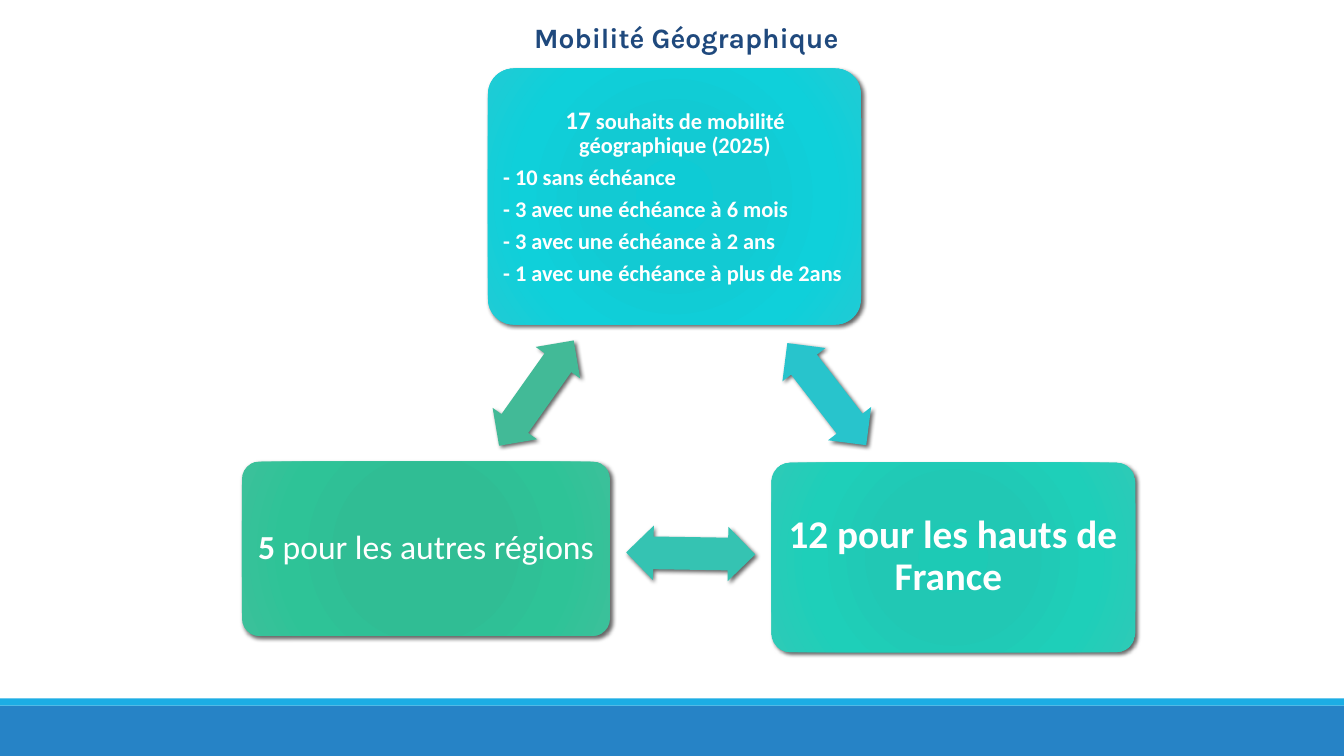
import pptx
import pptx.dml.color
import pptx.enum.shapes
import pptx.enum.text
import pptx.oxml
import pptx.oxml.ns
import pptx.util
from pptx.util import Inches

SHAPES = pptx.enum.shapes.MSO_SHAPE
ALIGN = pptx.enum.text.PP_ALIGN
COLORS = {
    "white": "FFFFFF", "title": "1F497D", "band": "2683C6", "stripe": "1CADE4",
    "arrow_right": "28C4CC", "arrow_bottom": "35C3B2", "arrow_left": "42BA97",
}
# Gradient colours of each card at the shared stops
STOPS = (0, 34, 70, 100)
GRADIENTS = {
    "wishes": ("0ECBD5", "12CAD3", "0FD0DA", "20CBD4"),
    "north": ("1DCAB5", "21C8B4", "1ECFB9", "2ECAB7"),
    "others": ("2DBE94", "30BD94", "2EC397", "3CC09A"),
}


class SlideBuilder:
    def __init__(self, deck):
        self.page = deck.slides.add_slide(deck.slide_layouts[6])
        self.font = "Calibri"

    def color(self, name):
        return pptx.dml.color.RGBColor.from_string(COLORS[name])

    def shape(self, kind, bounds, fill=None):
        box = self.page.shapes.add_shape(kind, *map(Inches, bounds))
        box.shadow.inherit = False
        box.line.fill.background()
        if fill:
            box.fill.solid()
            box.fill.fore_color.rgb = self.color(fill)
        return box

    def add_shadow(self, box):
        effects = box._element.spPr.find(pptx.oxml.ns.qn("a:effectLst"))
        effects.append(pptx.oxml.parse_xml(
            f'<a:outerShdw {pptx.oxml.ns.nsdecls("a")} blurRad="38100" dist="25400" '
            'dir="2700000" rotWithShape="0"><a:srgbClr val="000000">'
            '<a:alpha val="60000"/></a:srgbClr></a:outerShdw>'))

    def card(self, bounds, gradient):
        box = self.shape(SHAPES.ROUNDED_RECTANGLE, bounds)
        box.adjustments[0] = 0.1
        stops = "".join(
            f'<a:gs pos="{stop * 1000}"><a:srgbClr val="{shade}"/></a:gs>'
            for stop, shade in zip(STOPS, GRADIENTS[gradient]))
        fill = pptx.oxml.parse_xml(
            f'<a:gradFill {pptx.oxml.ns.nsdecls("a")} rotWithShape="1">'
            f'<a:gsLst>{stops}</a:gsLst><a:path path="circle">'
            '<a:fillToRect l="100000" t="100000" r="100000" b="100000"/>'
            '</a:path></a:gradFill>')
        box._element.spPr.find(pptx.oxml.ns.qn("a:prstGeom")).addnext(fill)
        self.add_shadow(box)

    def arrow(self, left, top, angle, fill):
        box = self.shape(SHAPES.LEFT_RIGHT_ARROW, (left, top, 1.28, 0.54), fill)
        box.adjustments[0], box.adjustments[1] = 0.6, 0.5
        box.rotation = angle
        self.add_shadow(box)

    def text_box(self, bounds, inset=None):
        frame = self.page.shapes.add_textbox(*map(Inches, bounds)).text_frame
        frame.word_wrap = True
        if inset is not None:
            frame.margin_left = frame.margin_right = Inches(inset)
            frame.margin_top = frame.margin_bottom = Inches(inset)
            frame.vertical_anchor = pptx.enum.text.MSO_ANCHOR.MIDDLE
        return frame

    def style(self, span, size, bold=True, color="white", font=None):
        span.font.name = font or self.font
        span.font.size = pptx.util.Pt(size)
        span.font.bold = bold
        span.font.color.rgb = self.color(color)

    def card_text(self, bounds, inset, size, paragraphs):
        """Each paragraph is (alignment, [(text, size, bold), ...])."""
        frame = self.text_box(bounds, inset)
        for index, (align, pieces) in enumerate(paragraphs):
            para = frame.add_paragraph() if index else frame.paragraphs[0]
            para.alignment = align
            para.line_spacing = 0.9
            para.space_after = pptx.util.Pt(0.35 * size)
            for text, points, bold in pieces:
                span = para.add_run()
                span.text = text
                self.style(span, points, bold)

    def title(self, text, bounds):
        frame = self.text_box(bounds)
        frame.auto_size = pptx.enum.text.MSO_AUTO_SIZE.SHAPE_TO_FIT_TEXT
        frame.text = text
        self.style(frame.paragraphs[0].runs[0], 20, color="title", font="Karla")


def main():
    deck = pptx.Presentation()
    deck.slide_width, deck.slide_height = Inches(13.33), Inches(7.5)
    slide = SlideBuilder(deck)

    # Footer bands
    slide.shape(SHAPES.RECTANGLE, (0, 7, 13.33, 0.5), "band")
    slide.shape(SHAPES.RECTANGLE, (0, 6.93, 13.33, 0.07), "stripe")

    # Mobility wishes
    deadlines = ("10 sans échéance", "3 avec une échéance à 6 mois",
                 "3 avec une échéance à 2 ans", "1 avec une échéance à plus de 2ans")
    heading = [("17", 18, True), (" ", 16, False),
               ("souhaits de mobilité géographique (2025)", 16, True)]
    slide.card((4.84, 0.68, 3.7, 2.54), "wishes")
    slide.card_text((4.92, 0.76, 3.55, 2.39), 0.07, 16, [(ALIGN.CENTER, heading)] + [
        (ALIGN.LEFT, [(f"- {deadline}", 16, True)]) for deadline in deadlines])

    # Destination regions
    slide.card((7.65, 4.59, 3.61, 1.88), "north")
    slide.card_text((7.7, 4.64, 3.5, 1.77), 0.12, 28, [
        (ALIGN.CENTER, [("12 pour les hauts de France ", 28, True)])])
    slide.card((2.4, 4.58, 3.65, 1.73), "others")
    slide.card_text((2.45, 4.63, 3.55, 1.63), 0.1, 24, [
        (ALIGN.CENTER, [("5", 24, True), (" pour les autres régions ", 24, False)])])

    # Arrows between the cards
    slide.arrow(7.56, 3.64, 52.3, "arrow_right")
    slide.arrow(6.21, 5.22, 180.9, "arrow_bottom")
    slide.arrow(4.68, 3.63, 305.3, "arrow_left")

    # Title
    slide.title("Mobilité Géographique", (5.2, 0.15, 3.44, 0.44))
    deck.save("out.pptx")


if __name__ == "__main__":
    main()
